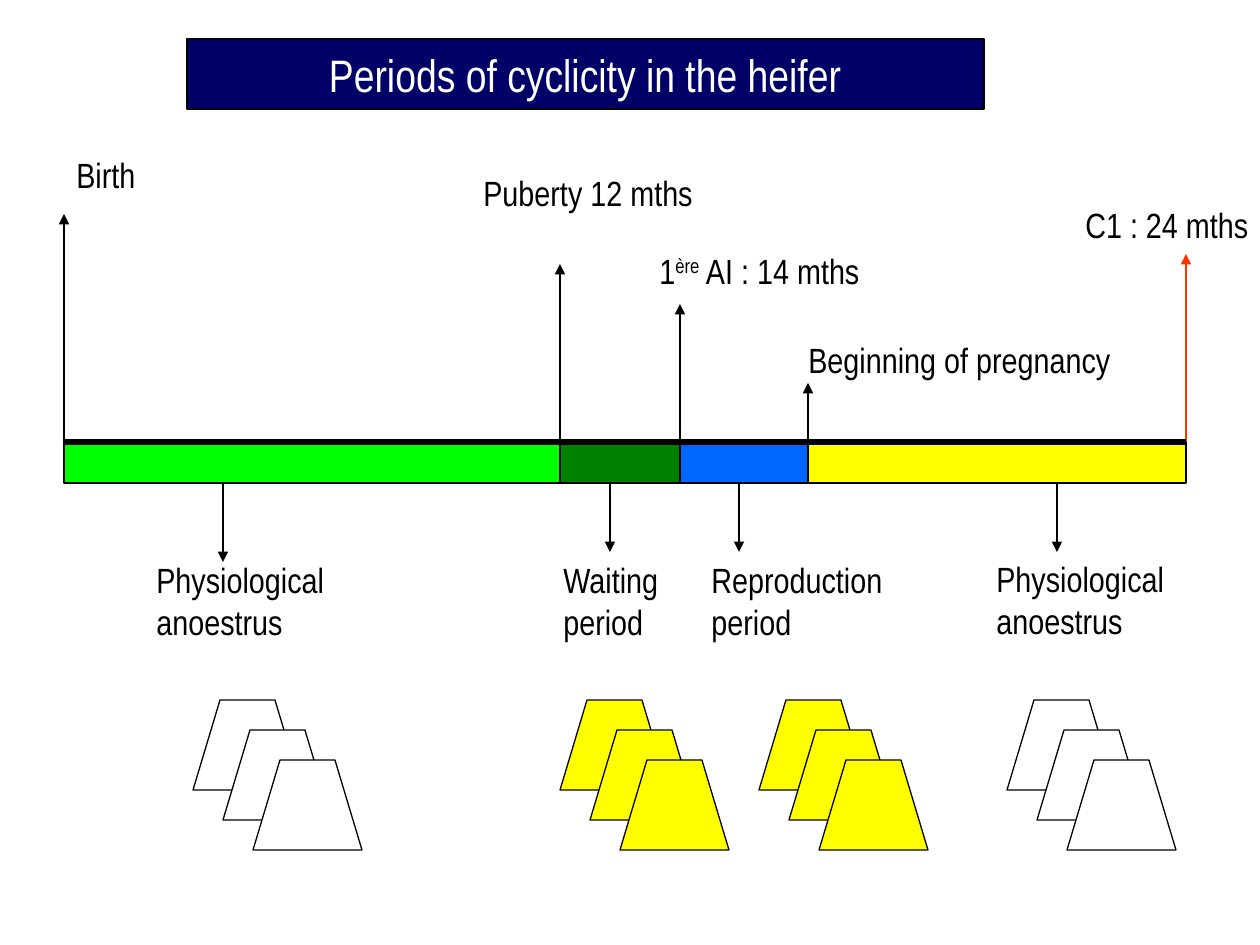
from pptx import Presentation
from pptx.dml.color import RGBColor
from pptx.enum.shapes import MSO_CONNECTOR, MSO_SHAPE
from pptx.enum.text import MSO_ANCHOR, MSO_AUTO_SIZE, PP_ALIGN
from pptx.oxml.ns import qn
from pptx.util import Emu, Pt
from lxml import etree

RECT = MSO_SHAPE.RECTANGLE
LINE = MSO_CONNECTOR.STRAIGHT
LEFT, CENTER = PP_ALIGN.LEFT, PP_ALIGN.CENTER
TOP, MIDDLE = MSO_ANCHOR.TOP, MSO_ANCHOR.MIDDLE
FIT, FIXED = MSO_AUTO_SIZE.SHAPE_TO_FIT_TEXT, MSO_AUTO_SIZE.NONE

BLACK = RGBColor(0, 0, 0)
WHITE = RGBColor(255, 255, 255)
NAVY = RGBColor(0, 0, 102)
LIME = RGBColor(0, 255, 0)
GREEN = RGBColor(0, 128, 0)
BLUE = RGBColor(0, 102, 255)
YELLOW = RGBColor(255, 255, 0)
RED = RGBColor(255, 51, 0)

FONT = "Arial Narrow"
SCALE = 914400 / 126

TITLE = "Periods of cyclicity in the heifer"
BAR_TOP, BAR_LOW = 442, 483
EDGES = [64, 560, 680, 808, 1186]
FILLS = [LIME, GREEN, BLUE, YELLOW]

EVENTS = [
    ([("Birth", False)], (64, 147, 86), 214, BLACK, 0.75),
    ([("Puberty 12 mths", False)], (471, 165, 237), 264, BLACK, 0.75),
    ([("1", False), ("ère", True), (" AI : 14 mths", False)],
     (647, 243, 231), 304, BLACK, 1),
    ([("Beginning of pregnancy", False)], (796, 332, 330), 383, BLACK, 1),
    ([("C1 : 24 mths", False)], (1073, 197, 189), 254, RED, 0.75),
]

PERIODS = [
    (["Physiological", "anoestrus"], (144, 552, 203), (223, 562), 193, WHITE),
    (["Waiting", "period"], (551, 552, 128), (610, 552), 560, YELLOW),
    (["Reproduction", "period"], (699, 552, 208), (739, 552), 759, YELLOW),
    (["Physiological", "anoestrus"], (984, 551, 203), (1057, 552), 1007, WHITE),
]

STACK_TOP, STEP, COUNT = 700, 30, 3
WIDE, HIGH, SLANT = 109, 90, 27


def px(n):
    return Emu(round(n * SCALE))


def style(shape, fill, width):
    shape.shadow.inherit = False
    shape.fill.solid()
    shape.fill.fore_color.rgb = fill
    shape.line.color.rgb = BLACK
    shape.line.width = Pt(width)


def box(slide, x, y, w, h, fill, width):
    shape = slide.shapes.add_shape(RECT, px(x), px(y), px(w), px(h))
    style(shape, fill, width)
    return shape


def write(shape, lines, size=20, color=BLACK, align=LEFT, anchor=TOP,
          wrap=False, fit=FIT):
    frame = shape.text_frame
    frame.word_wrap = wrap
    frame.auto_size = fit
    frame.vertical_anchor = anchor
    for i, parts in enumerate(lines):
        para = frame.add_paragraph() if i else frame.paragraphs[0]
        para.alignment = align
        for text, raised in parts:
            run = para.add_run()
            run.text = text
            run.font.name = FONT
            run.font.size = Pt(size)
            run.font.color.rgb = color
            if raised:
                run.font._element.set("baseline", "30000")


def label(slide, spot, lines):
    x, y, w = spot
    h = 55 + 42 * (len(lines) - 1)
    write(slide.shapes.add_textbox(px(x), px(y), px(w), px(h)), lines)


def rule(slide, x1, y1, x2, y2, color, width, arrow=True):
    line = slide.shapes.add_connector(LINE, px(x1), px(y1), px(x2), px(y2))
    line.line.color.rgb = color
    line.line.width = Pt(width)
    if arrow:
        etree.SubElement(line.line._get_or_add_ln(), qn("a:tailEnd"),
                         type="triangle")
    etree.SubElement(line._element.spPr, qn("a:effectLst"))


def stack(slide, left, fill):
    for i in range(COUNT):
        x, y = left + i * STEP, STACK_TOP + i * STEP
        form = slide.shapes.build_freeform(x, y + HIGH, scale=SCALE)
        form.add_line_segments([(x + SLANT, y), (x + WIDE - SLANT, y),
                                (x + WIDE, y + HIGH)], close=True)
        style(form.convert_to_shape(), fill, 0.75)


def main():
    deck = Presentation()
    deck.slide_width, deck.slide_height = px(1260), px(945)
    slide = deck.slides.add_slide(deck.slide_layouts[6])

    for x, end, fill in zip(EDGES, EDGES[1:], FILLS):
        box(slide, x, BAR_TOP, end - x, BAR_LOW - BAR_TOP, fill, 1)

    for x, (parts, spot, tip, color, width) in zip(EDGES, EVENTS):
        label(slide, spot, [parts])
        rule(slide, x, BAR_TOP, x, tip, color, width)

    for words, spot, (x, tip), left, fill in PERIODS:
        label(slide, spot, [[(word, False)] for word in words])
        rule(slide, x, BAR_LOW, x, tip, BLACK, 1.5)
        stack(slide, left, fill)

    rule(slide, EDGES[0], BAR_TOP, EDGES[-1], BAR_TOP, BLACK, 3, arrow=False)
    head = box(slide, 187, 39, 797, 70, NAVY, 0.75)
    write(head, [[(TITLE, False)]], size=26, color=WHITE, align=CENTER,
          anchor=MIDDLE, wrap=True, fit=FIXED)
    deck.save("out.pptx")


if __name__ == "__main__":
    main()
